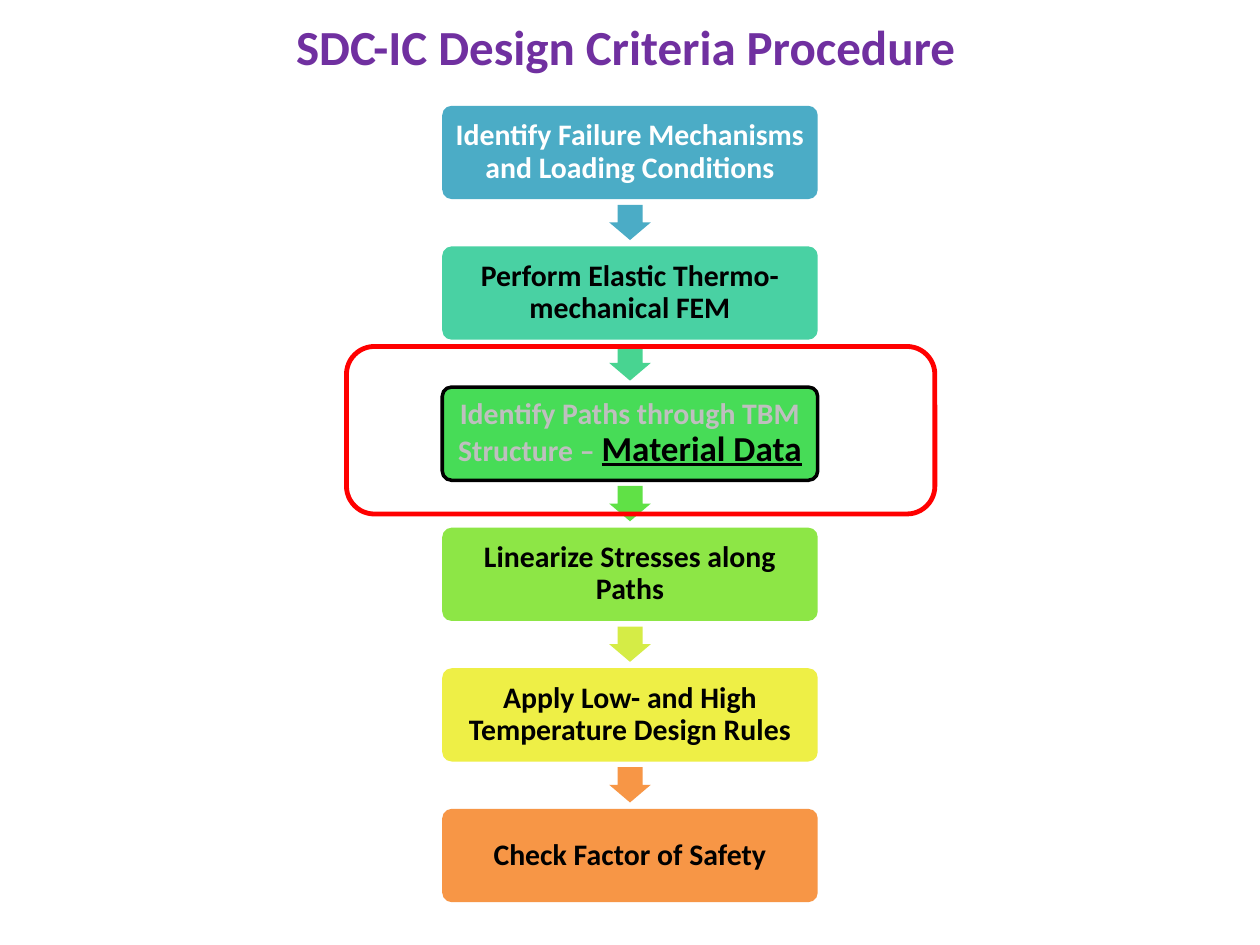
from dataclasses import dataclass

from pptx import Presentation
from pptx.dml.color import RGBColor
from pptx.enum.shapes import MSO_SHAPE
from pptx.enum.text import MSO_ANCHOR, PP_ALIGN
from pptx.util import Inches, Pt

ROUND = MSO_SHAPE.ROUNDED_RECTANGLE
ARROW = MSO_SHAPE.RIGHT_ARROW
MIDDLE = MSO_ANCHOR.MIDDLE
LEFT = PP_ALIGN.LEFT
CENTER = PP_ALIGN.CENTER

SIDES = ("margin_left", "margin_top", "margin_right", "margin_bottom")
BOX_X, BOX_W, BOX_H = 3.51, 2.98, 0.74
TOP, PITCH = 0.84, 1.116
ARROW_W, ARROW_H, ARROW_GAP = 0.28, 0.33, 0.76


@dataclass
class Run:
    text: str
    color: str = "000000"
    size: float = 17
    under: bool | None = None


@dataclass
class Step:
    fill: str
    runs: list[Run]
    arrow: str | None = None
    line: str | None = None


STEPS = [
    Step("4BACC6", [Run("Identify Failure Mechanisms and Loading Conditions", "FFFFFF")], "4BACC6"),
    Step("49D1A3", [Run("Perform Elastic Thermo-mechanical FEM")], "48D491"),
    Step(
        "47DC57",
        [
            Run("Identify Paths through TBM Structure – ", "BFBFBF"),
            Run("Material Data", size=20, under=True),
        ],
        "60E146",
        "000000",
    ),
    Step("8DE646", [Run("Linearize Stresses along Paths")], "D5EC46"),
    Step("EEEF46", [Run("Apply Low- and High Temperature Design Rules")], "F79646"),
    Step("F79646", [Run("Check Factor of Safety")]),
]


def paint(form, color: str) -> None:
    form.solid()
    form.fore_color.rgb = RGBColor.from_string(color)


def write(para, run: Run) -> None:
    part = para.add_run()
    part.text = run.text
    look = {"name": "Calibri", "size": Pt(run.size), "bold": True, "underline": run.under}
    for key, value in look.items():
        setattr(part.font, key, value)
    part.font.color.rgb = RGBColor.from_string(run.color)


def draw(slide, kind, x: float, y: float, w: float, h: float,
         fill: str | None = None, line: str | None = None, weight: float = 2):
    shape = slide.shapes.add_shape(kind, Inches(x), Inches(y), Inches(w), Inches(h))
    shape.shadow.inherit = False
    if fill:
        paint(shape.fill, fill)
    else:
        shape.fill.background()
    if line:
        paint(shape.line.fill, line)
        shape.line.width = Pt(weight)
    else:
        shape.line.fill.background()
    return shape


def add_step(slide, step: Step, y: float) -> None:
    box = draw(slide, ROUND, BOX_X, y, BOX_W, BOX_H, step.fill, step.line)
    box.adjustments[0] = 0.1
    frame = box.text_frame
    look = {"word_wrap": True, "vertical_anchor": MIDDLE}
    look.update({side: Inches(0.07) for side in SIDES})
    for key, value in look.items():
        setattr(frame, key, value)
    para = frame.paragraphs[0]
    para.alignment = CENTER
    para.line_spacing = 0.9
    for run in step.runs:
        write(para, run)
    if step.arrow:
        x = BOX_X + (BOX_W - ARROW_W) / 2
        arrow = draw(slide, ARROW, x, y + ARROW_GAP, ARROW_W, ARROW_H, step.arrow)
        arrow.rotation = 90
        arrow.adjustments[0] = 0.6
        arrow.adjustments[1] = 0.5


def add_title(slide, text: str) -> None:
    title = slide.shapes.title
    place = {"left": 2.25, "top": 0.08, "width": 5.61, "height": 0.57}
    for key, value in place.items():
        setattr(title, key, Inches(value))
    frame = title.text_frame
    frame.word_wrap = False
    frame.vertical_anchor = MIDDLE
    para = frame.paragraphs[0]
    para.alignment = LEFT
    write(para, Run(text, "7030A0", 28))


def main() -> None:
    deck = Presentation()
    deck.slide_width = Inches(10)
    deck.slide_height = Inches(7.5)
    slide = deck.slides.add_slide(deck.slide_layouts[5])
    add_title(slide, "SDC-IC Design Criteria Procedure")
    for row, step in enumerate(STEPS):
        add_step(slide, step, TOP + row * PITCH)
    draw(slide, ROUND, 2.75, 2.75, 4.67, 1.33, line="FF0000", weight=2.75)
    deck.save("out.pptx")


if __name__ == "__main__":
    main()
